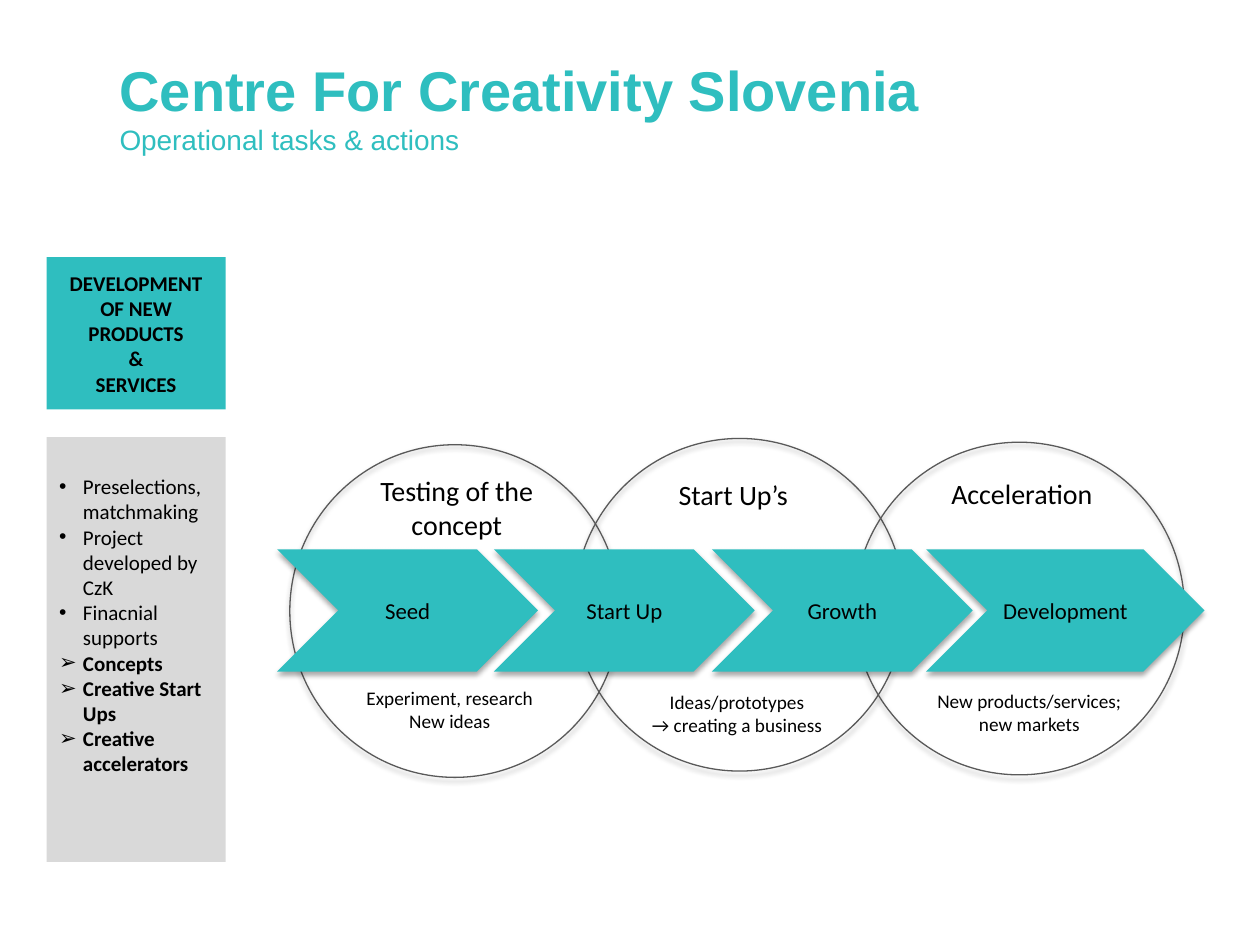
from lxml.etree import SubElement
from pptx import Presentation
from pptx.dml.color import RGBColor
from pptx.enum.shapes import MSO_SHAPE as Preset
from pptx.enum.text import MSO_ANCHOR as Anchor, PP_ALIGN as Align
from pptx.oxml.ns import qn
from pptx.util import Inches, Pt

TEAL = RGBColor(0x2F, 0xBE, 0xBF)
LIGHT_GREY = RGBColor(0xD9, 0xD9, 0xD9)
DARK_GREY = RGBColor(0x59, 0x59, 0x59)
BLACK = RGBColor(0, 0, 0)


def set_font(target, size, color=BLACK, bold=False, name="Calibri"):
    target.font.name = name
    target.font.size = Pt(size)
    target.font.bold = bold
    target.font.color.rgb = color


def add_preset(slide, preset, box, fill=None, outline=None):
    shape = slide.shapes.add_shape(preset, *map(Inches, box))
    shape.shadow.inherit = False
    if fill is None:
        shape.fill.background()
    else:
        shape.fill.solid()
        shape.fill.fore_color.rgb = fill
    if outline is None:
        shape.line.fill.background()
    else:
        shape.line.color.rgb = outline
        shape.line.width = Pt(0.75)
    return shape


def add_shadow(shape):
    effects = shape._element.spPr.find(qn("a:effectLst"))
    shadow = SubElement(effects, qn("a:outerShdw"), blurRad=str(Pt(3.1)),
                        dist=str(Pt(1.8)), dir="5400000", rotWithShape="0")
    color = SubElement(shadow, qn("a:srgbClr"), val="000000")
    SubElement(color, qn("a:alpha"), val="35000")


def write_lines(frame, lines, size, bold=False, align=Align.CENTER):
    for index, line in enumerate(lines):
        paragraph = frame.paragraphs[0] if index == 0 else frame.add_paragraph()
        paragraph.text = line
        paragraph.alignment = align
        set_font(paragraph, size, bold=bold)


def add_bullet(paragraph, mark):
    properties = paragraph._p.get_or_add_pPr()
    properties.set("marL", str(Inches(0.19)))
    properties.set("indent", str(-Inches(0.19)))
    SubElement(properties, qn("a:buFont"), typeface="Arial")
    SubElement(properties, qn("a:buChar"), char=mark)


def add_heading(slide, box):
    frame = slide.shapes.add_textbox(*map(Inches, box)).text_frame
    frame.word_wrap = True
    paragraph = frame.paragraphs[0]
    title = paragraph.add_run()
    title.text = "Centre For Creativity Slovenia"
    set_font(title, 32, TEAL, True, "Arial")
    paragraph.add_line_break()
    subtitle = paragraph.add_run()
    subtitle.text = "Operational tasks & actions"
    set_font(subtitle, 16, TEAL, False, "Arial")


def add_topic(slide, box):
    frame = add_preset(slide, Preset.RECTANGLE, box, TEAL).text_frame
    frame.word_wrap = True
    frame.vertical_anchor = Anchor.MIDDLE
    write_lines(frame, ["DEVELOPMENT OF NEW PRODUCTS", "&", "SERVICES"], 12, True)


def add_services(slide, box):
    frame = add_preset(slide, Preset.RECTANGLE, box, LIGHT_GREY).text_frame
    frame.word_wrap = True
    frame.vertical_anchor = Anchor.TOP
    frame.margin_top = Inches(0.29)
    services = [
        ("•", "Preselections, matchmaking"),
        ("•", "Project developed by CzK"),
        ("•", "Finacnial supports"),
        ("➢", "Concepts"),
        ("➢", "Creative Start Ups"),
        ("➢", "Creative accelerators"),
    ]
    for index, (mark, service) in enumerate(services):
        paragraph = frame.paragraphs[0] if index == 0 else frame.add_paragraph()
        paragraph.text = service
        paragraph.alignment = Align.LEFT
        add_bullet(paragraph, mark)
        set_font(paragraph, 12, bold=mark == "➢")


def add_phase_circle(slide, box):
    add_shadow(add_preset(slide, Preset.OVAL, box, outline=DARK_GREY))


def add_step(slide, box, step):
    chevron = add_preset(slide, Preset.CHEVRON, box, TEAL)
    add_shadow(chevron)
    chevron.text_frame.vertical_anchor = Anchor.MIDDLE
    write_lines(chevron.text_frame, [step], 13)


def add_label(slide, box, lines, size):
    frame = slide.shapes.add_textbox(*map(Inches, box)).text_frame
    frame.word_wrap = False
    write_lines(frame, lines, size)


def add_process(slide, left, top):
    for dx, dy in [(0.1, 0.05), (2.36, 0), (4.58, 0.03)]:
        add_phase_circle(slide, (left + dx, top + dy, 2.62, 2.64))

    steps = [("Seed", 0, 2.07), ("Start Up", 1.72, 2.07),
             ("Growth", 3.45, 2.07), ("Development", 5.15, 2.21)]
    for step, dx, width in steps:
        add_step(slide, (left + dx, top + 0.88, width, 0.97), step)

    phases = [
        (["Testing of the", "concept"], (0.7, 0.23, 1.45, 0.64)),
        (["Start Up’s"], (3.07, 0.26, 1.1, 0.37)),
        (["Acceleration"], (5.24, 0.25, 1.34, 0.37)),
    ]
    results = [
        (["Experiment, research", "New ideas"], (0.6, 1.92, 1.54, 0.47)),
        (["Ideas/prototypes", "→ creating a business"], (2.86, 1.95, 1.58, 0.47)),
        (["New products/services;", "new markets"], (5.13, 1.94, 1.68, 0.47)),
    ]
    for labels, size in [(phases, 16), (results, 11)]:
        for lines, (dx, dy, width, height) in labels:
            add_label(slide, (left + dx, top + dy, width, height), lines, size)


def main():
    deck = Presentation()
    deck.slide_width, deck.slide_height = Inches(10), Inches(7.5)
    slide = deck.slides.add_slide(deck.slide_layouts[6])
    add_heading(slide, (0.85, 0.39, 8.02, 0.91))
    add_topic(slide, (0.37, 2.04, 1.42, 1.21))
    add_process(slide, 2.2, 3.48)
    add_services(slide, (0.37, 3.47, 1.42, 3.37))
    deck.save("out.pptx")


if __name__ == "__main__":
    main()
